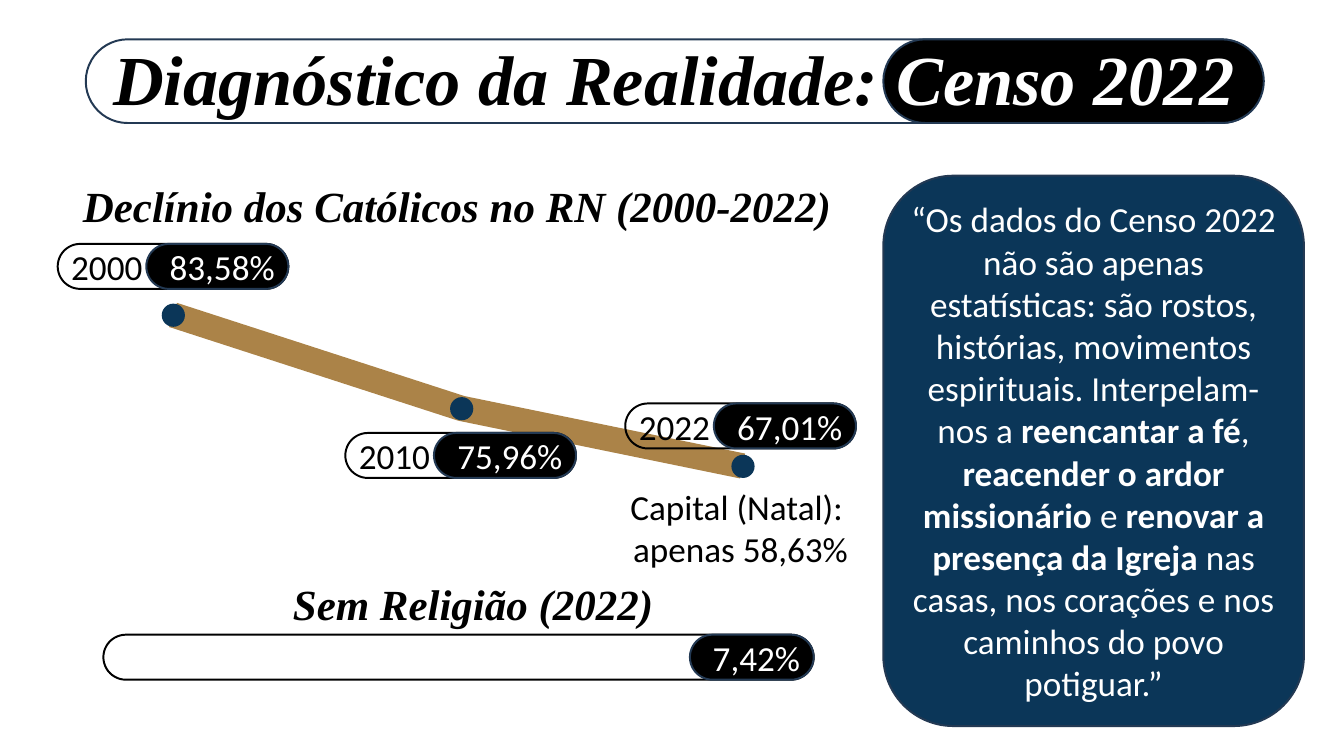
"""Builds the Censo 2022 slide on religion in RN."""
from pptx import Presentation
from pptx.dml.color import RGBColor
from pptx.enum.shapes import MSO_SHAPE
from pptx.enum.text import MSO_ANCHOR, PP_ALIGN
from pptx.util import Pt

PX = 9144
ROUND, OVAL = MSO_SHAPE.ROUNDED_RECTANGLE, MSO_SHAPE.OVAL
LEFT, MID, RIGHT = PP_ALIGN.LEFT, PP_ALIGN.CENTER, PP_ALIGN.RIGHT
TOP, CENTER = MSO_ANCHOR.TOP, MSO_ANCHOR.MIDDLE
SANS, SERIF = "Calibri", "Times New Roman"
BLACK, WHITE, NAVY, EDGE, GOLD = "000000", "FFFFFF", "0B3658", "233953", "AB8348"
PILL = 64
DOT = 33

TREND = [(246, 448), (656, 581), (1056, 663)]
YEARS = [("2000", "83,58%", 82, 347), ("2010", "75,96%", 491, 616),
         ("2022", "67,01%", 889, 574)]
QUOTE = [
    [("“Os dados do Censo 2022 não são apenas estatísticas: são rostos, "
      "histórias, movimentos espirituais. Interpelam-nos a ", False),
     ("reencantar a fé", True), (", ", False),
     ("reacender o ardor missionário", True), (" e ", False),
     ("renovar a presença da Igreja ", True),
     ("nas casas, nos corações e nos", False)],
    [("caminhos do povo potiguar.”", False)],
]


def emu(*sizes):
    """Turn px lengths into EMU."""
    return [size * PX for size in sizes]


def color(code):
    """Turn a hex string into a colour."""
    return RGBColor.from_string(code)


def style(font, size, face, code, bold=False, slant=False):
    """Set the look of a font."""
    font.size, font.name = Pt(size), face
    font.bold, font.italic = bold, slant
    font.color.rgb = color(code)


def shape(slide, kind, box, fill=None, line=None, curve=None):
    """Add a preset shape with an optional fill, outline and corner."""
    item = slide.shapes.add_shape(kind, *emu(*box))
    item.shadow.inherit = False
    if curve is not None:
        item.adjustments[0] = curve
    if fill:
        item.fill.solid()
        item.fill.fore_color.rgb = color(fill)
    else:
        item.fill.background()
    if line:
        item.line.color.rgb = color(line)
        item.line.width = Pt(2)
    else:
        item.line.fill.background()
    return item


def write(frame, rows, size, face, align, anchor, slant=False):
    """Write rows of (text, colour, bold) runs into a text frame."""
    frame.word_wrap = True
    frame.vertical_anchor = anchor
    for place, row in enumerate(rows):
        para = frame.add_paragraph() if place else frame.paragraphs[0]
        para.alignment = align
        for text, code, bold in row:
            run = para.add_run()
            run.text = text
            style(run.font, size, face, code, bold, slant)


def pill(slide, box, fill=None, line=BLACK, text=None, align=LEFT):
    """Add a fully rounded bar with an optional label."""
    item = shape(slide, ROUND, box, fill, line, 0.5)
    if text:
        code = WHITE if fill else BLACK
        write(item.text_frame, [[(text, code, False)]], 36, SANS, align, CENTER)


def badge(slide, year, share, left, top):
    """Add a year bar with its share at the right end."""
    pill(slide, (left, top, 328, PILL), text=year)
    pill(slide, (left + 126, top, 202, PILL), BLACK, EDGE, share, RIGHT)


def label(slide, box, rows, size, face=SERIF, slant=True):
    """Add a centred text box and return its frame."""
    frame = slide.shapes.add_textbox(*emu(*box)).text_frame
    write(frame, rows, size, face, MID, TOP, slant)
    return frame


def header(slide):
    """Add the title over its two bars."""
    pill(slide, (122, 56, 1674, 119), line=EDGE)
    pill(slide, (1256, 56, 541, 119), BLACK, EDGE)
    row = [("Diagnóstico da Realidade: ", BLACK, True), ("Censo 2022", WHITE, True)]
    frame = label(slide, (98, 50, 1720, 121), [row], 72)
    frame.margin_left = frame.margin_right = 0
    frame.margin_top = frame.margin_bottom = 0


def trend(slide):
    """Draw the falling line, its dots and its year bars."""
    first, *rest = TREND
    path = slide.shapes.build_freeform(*first, scale=PX)
    path.add_line_segments(rest, close=False)
    line = path.convert_to_shape()
    line.shadow.inherit = False
    line.fill.background()
    line.line.color.rgb = color(GOLD)
    line.line.width = Pt(26)
    for x, y in TREND:
        shape(slide, OVAL, (x - DOT // 2, y - DOT // 2, DOT, DOT), NAVY)
    for year in YEARS:
        badge(slide, *year)


def quote(slide):
    """Add the panel with the quotation."""
    panel = shape(slide, ROUND, (1256, 250, 598, 783), NAVY, EDGE)
    rows = [[(text, WHITE, bold) for text, bold in row] for row in QUOTE]
    write(panel.text_frame, rows, 36, SANS, MID, CENTER)


def main():
    """Build and save the slide."""
    deck = Presentation()
    deck.slide_width, deck.slide_height = emu(1911, 1067)
    slide = deck.slides.add_slide(deck.slide_layouts[6])
    header(slide)
    trend(slide)
    label(slide, (50, 250, 1201, 84),
          [[("Declínio dos Católicos no RN (2000-2022)", BLACK, True)]], 44)
    label(slide, (853, 686, 400, 131),
          [[("Capital (Natal): ", BLACK, False)], [("apenas 58,63%", BLACK, False)]],
          36, SANS, False)
    label(slide, (326, 817, 694, 84), [[("Sem Religião (2022)", BLACK, True)]], 44)
    pill(slide, (147, 903, 1010, PILL))
    pill(slide, (981, 903, 176, PILL), BLACK, EDGE, "7,42%", RIGHT)
    quote(slide)
    deck.save("out.pptx")


if __name__ == "__main__":
    main()
